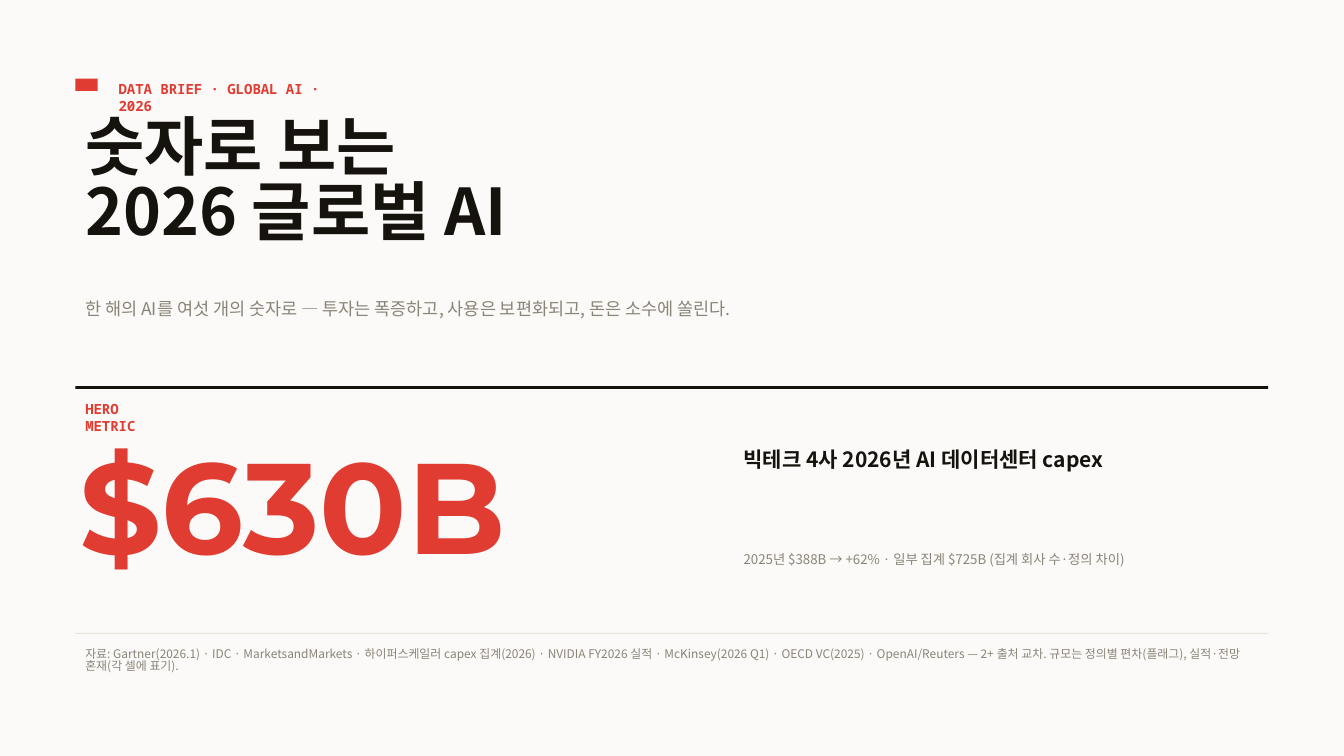
import pptx
import pptx.dml.color
import pptx.enum.shapes
import pptx.enum.text
import pptx.util

Cm = pptx.util.Cm
RGBColor = pptx.dml.color.RGBColor

PAPER = RGBColor(0xFB, 0xFA, 0xF8)
INK = RGBColor(0x16, 0x13, 0x0F)
RED = RGBColor(0xE0, 0x3C, 0x31)
GREY = RGBColor(0x8A, 0x84, 0x78)
RULE = RGBColor(0xE2, 0xDC, 0xCF)

KOREAN, MONO, DISPLAY = "Noto Sans CJK KR", "Noto Sans Mono", "Montserrat"
KOREAN_SPACING = 0.84

# Positions in centimetres: left, top, width, height
MARGIN, CONTENT_WIDTH = 1.9, 30.06
DETAIL_LEFT, DETAIL_WIDTH = 18.49, 13.49

TITLE_LINES = ["숫자로 보는", "2026 글로벌 AI"]
TITLE_BOX = (MARGIN, 2.85, CONTENT_WIDTH, 4.19)

BARS = [
    ((MARGIN, 1.98, 0.56, 0.31), RED),
    ((MARGIN, 9.73, CONTENT_WIDTH, 0.07), INK),
    ((MARGIN, 15.95, CONTENT_WIDTH, 0.02), RULE),
]

# Text, box, font, size, colour, bold
TEXTS = [
    ("DATA BRIEF · GLOBAL AI · 2026", (2.74, 1.9, 6.2, 0.69), MONO, 10, RED, True),
    ("한 해의 AI를 여섯 개의 숫자로 — 투자는 폭증하고, 사용은 보편화되고, 돈은 소수에 쏠린다.",
     (MARGIN, 7.47, 21.16, 0.79), KOREAN, 12.5, GREY, False),
    ("HERO METRIC", (MARGIN, 9.96, 2.67, 0.69), MONO, 10, RED, True),
    ("$630B", (1.75, 10.59, 11.81, 4.19), DISPLAY, 92, RED, True),
    ("빅테크 4사 2026년 AI 데이터센터 capex",
     (DETAIL_LEFT, 11.23, DETAIL_WIDTH, 0.89), KOREAN, 15, INK, True),
    ("2025년 $388B → +62% · 일부 집계 $725B (집계 회사 수·정의 차이)",
     (DETAIL_LEFT, 13.82, DETAIL_WIDTH, 0.66), KOREAN, 9.5, GREY, False),
    ("자료: Gartner(2026.1) · IDC · MarketsandMarkets · 하이퍼스케일러 capex 집계(2026) · "
     "NVIDIA FY2026 실적 · McKinsey(2026 Q1) · OECD VC(2025) · OpenAI/Reuters — 2+ 출처 교차. "
     "규모는 정의별 편차(플래그), 실적·전망 혼재(각 셀에 표기).",
     (MARGIN, 16.23, CONTENT_WIDTH, 0.99), KOREAN, 8.5, GREY, False),
]


def write(shape, lines, font_name, size, colour, bold):
    frame = shape.text_frame
    frame.text = "\n".join(lines)
    frame.word_wrap = True
    frame.auto_size = pptx.enum.text.MSO_AUTO_SIZE.NONE
    frame.vertical_anchor = pptx.enum.text.MSO_ANCHOR.TOP
    for paragraph in frame.paragraphs:
        paragraph.alignment = pptx.enum.text.PP_ALIGN.LEFT
        if font_name == KOREAN:
            paragraph.line_spacing = KOREAN_SPACING
        font = paragraph.font
        font.name, font.size, font.bold = font_name, pptx.util.Pt(size), bold
        font.color.rgb = colour
        # Hangul takes its typeface from the East Asian font slot
        east_asian = pptx.oxml.parse_xml(
            '<a:ea xmlns:a="http://schemas.openxmlformats.org/drawingml/2006/main" '
            f'typeface="{font_name}"/>')
        properties = paragraph.runs[0].font
        properties.name = font_name
        paragraph.runs[0]._r.get_or_add_rPr().append(east_asian)


def main():
    presentation = pptx.Presentation()
    presentation.slide_width, presentation.slide_height = Cm(33.87), Cm(19.05)
    slide = presentation.slides.add_slide(presentation.slide_layouts[5])
    slide.background.fill.solid()
    slide.background.fill.fore_color.rgb = PAPER

    title = slide.shapes.title
    title.left, title.top, title.width, title.height = map(Cm, TITLE_BOX)
    write(title, TITLE_LINES, KOREAN, 46, INK, True)

    for box, colour in BARS:
        bar = slide.shapes.add_shape(
            pptx.enum.shapes.MSO_SHAPE.RECTANGLE, *map(Cm, box))
        bar.shadow.inherit = False
        bar.fill.solid()
        bar.fill.fore_color.rgb = colour
        bar.line.fill.background()

    for text, box, font_name, size, colour, bold in TEXTS:
        text_box = slide.shapes.add_textbox(*map(Cm, box))
        write(text_box, [text], font_name, size, colour, bold)

    presentation.save("out.pptx")


if __name__ == "__main__":
    main()
